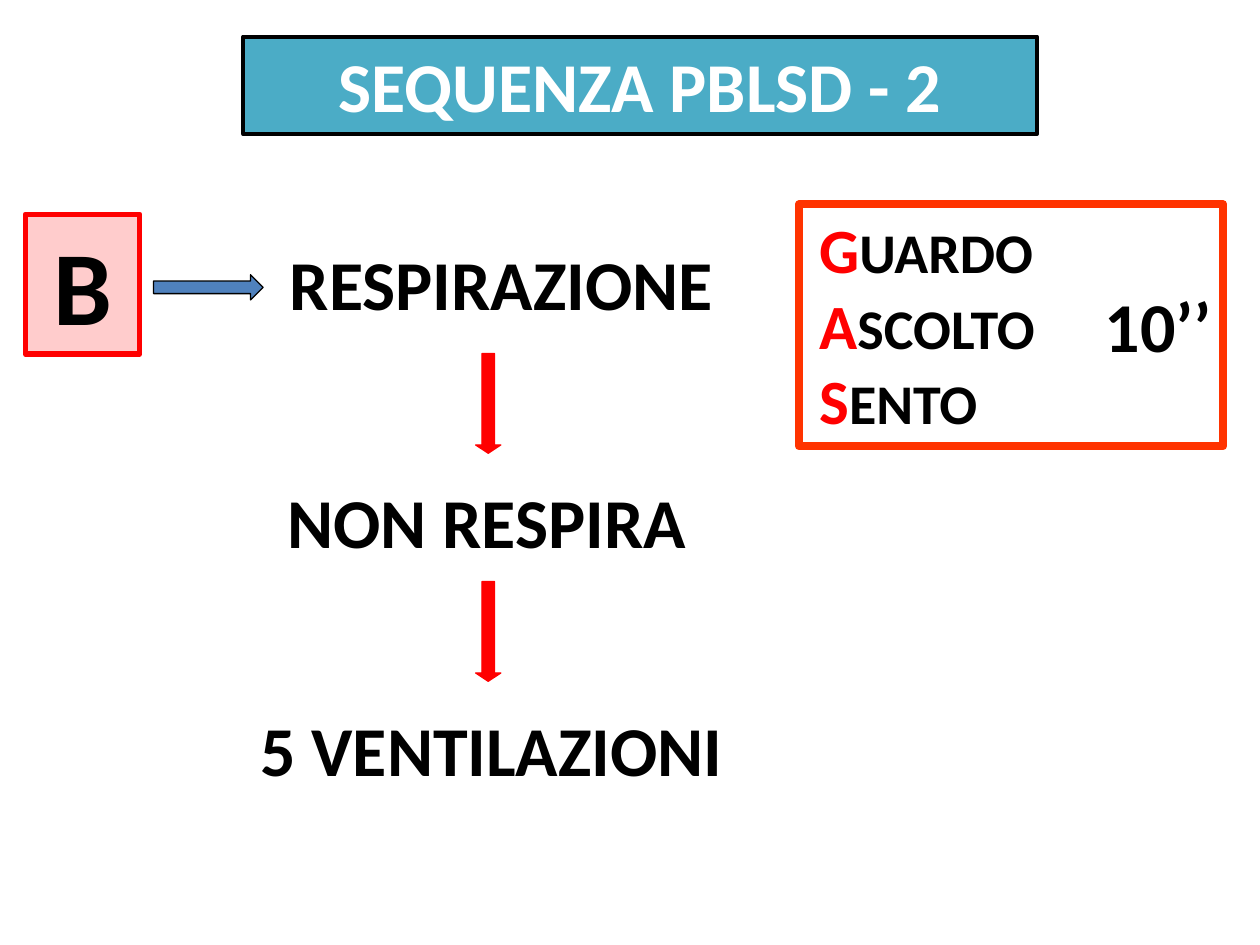
from pptx import Presentation
from pptx import util as u
from pptx.dml.color import RGBColor
from pptx.enum import shapes, text

COLORS = {"black": "000000", "white": "FFFFFF", "red": "FF0000", "pink": "FFCCCC",
          "orange": "FF3300", "blue": "4F81BD", "teal": "4BACC6"}
SHAPE = shapes.MSO_SHAPE
ALIGN = text.PP_ALIGN


def color(name):
    return RGBColor.from_string(COLORS[name])


class SlideBuilder:
    font = {"name": "Calibri", "bold": True}
    frame = {"margin_top": u.Pt(3.6), "margin_right": u.Pt(3.6),
             "margin_bottom": u.Pt(3.6), "word_wrap": True,
             "auto_size": text.MSO_AUTO_SIZE.NONE,
             "vertical_anchor": text.MSO_ANCHOR.TOP}

    def __init__(self, prs):
        self.s = prs.slides.add_slide(prs.slide_layouts[5])

    def paint(self, sp, fill, line, width):
        if fill:
            sp.fill.solid()
            sp.fill.fore_color.rgb = color(fill)
        else:
            sp.fill.background()
        sp.line.color.rgb = color(line)
        sp.line.width = u.Pt(width)

    def add_text(self, sp, lines, align=ALIGN.CENTER, indent=3.6):
        tf = sp.text_frame
        for key, value in {**self.frame, "margin_left": u.Pt(indent)}.items():
            setattr(tf, key, value)
        for i, runs in enumerate(lines):
            p = tf.add_paragraph() if i else tf.paragraphs[0]
            p.alignment = align
            for words, size, ink in runs:
                r = p.add_run()
                r.text = words
                for key, value in {**self.font, "size": u.Pt(size)}.items():
                    setattr(r.font, key, value)
                r.font.color.rgb = color(ink)

    def title(self, box, words, fill, line, width):
        sp = self.s.shapes.title
        for key, value in zip(("left", "top", "width", "height"), box):
            setattr(sp, key, u.Pt(value))
        self.paint(sp, fill, line, width)
        self.add_text(sp, [[(words, 40, "white")]])

    def shape(self, kind, box, fill, line, width, adjust=()):
        sp = self.s.shapes.add_shape(kind, *map(u.Pt, box))
        sp.shadow.inherit = False
        self.paint(sp, fill, line, width)
        for i, value in enumerate(adjust):
            sp.adjustments[i] = value
        return sp

    def label(self, box, words, align=ALIGN.CENTER):
        sp = self.s.shapes.add_textbox(*map(u.Pt, box))
        self.add_text(sp, [[(words, 40, "black")]], align)


def main():
    prs = Presentation()
    prs.slide_width, prs.slide_height = u.Pt(720), u.Pt(540)
    b = SlideBuilder(prs)

    b.title((139, 20.9, 453.6, 55.7), "SEQUENZA PBLSD - 2", "teal", "black", 2.25)

    checks = b.shape(SHAPE.RECTANGLE, (456.5, 116.8, 242.6, 138.2), None, "orange", 4.5)
    b.add_text(checks, [[(word[0], 36, "red"), (word[1:], 32, "black")]
                        for word in ("GUARDO", "ASCOLTO", "SENTO")], ALIGN.LEFT, 11.7)
    b.label((627.8, 157.7, 90, 55.7), "10’’", ALIGN.LEFT)

    step = b.shape(SHAPE.RECTANGLE, (14.4, 122.4, 65.5, 80), "pink", "red", 3)
    b.add_text(step, [[("B", 60, "black")]])
    b.shape(SHAPE.RIGHT_ARROW, (87.8, 157, 62.6, 14.4), "blue", "black", 0.75)

    for left, top, width, words in ((156.2, 134, 260.6, "RESPIRAZIONE"),
                                    (156.2, 270, 244, "NON RESPIRA"),
                                    (105.1, 400.4, 351.4, "5 VENTILAZIONI")):
        b.label((left, top, width, 55.7), words)
    for top in (202, 332.3):
        b.shape(SHAPE.DOWN_ARROW, (271.8, top, 14.4, 57), "red", "red", 0.75, (0.5, 0.33))

    prs.save("out.pptx")


if __name__ == "__main__":
    main()
